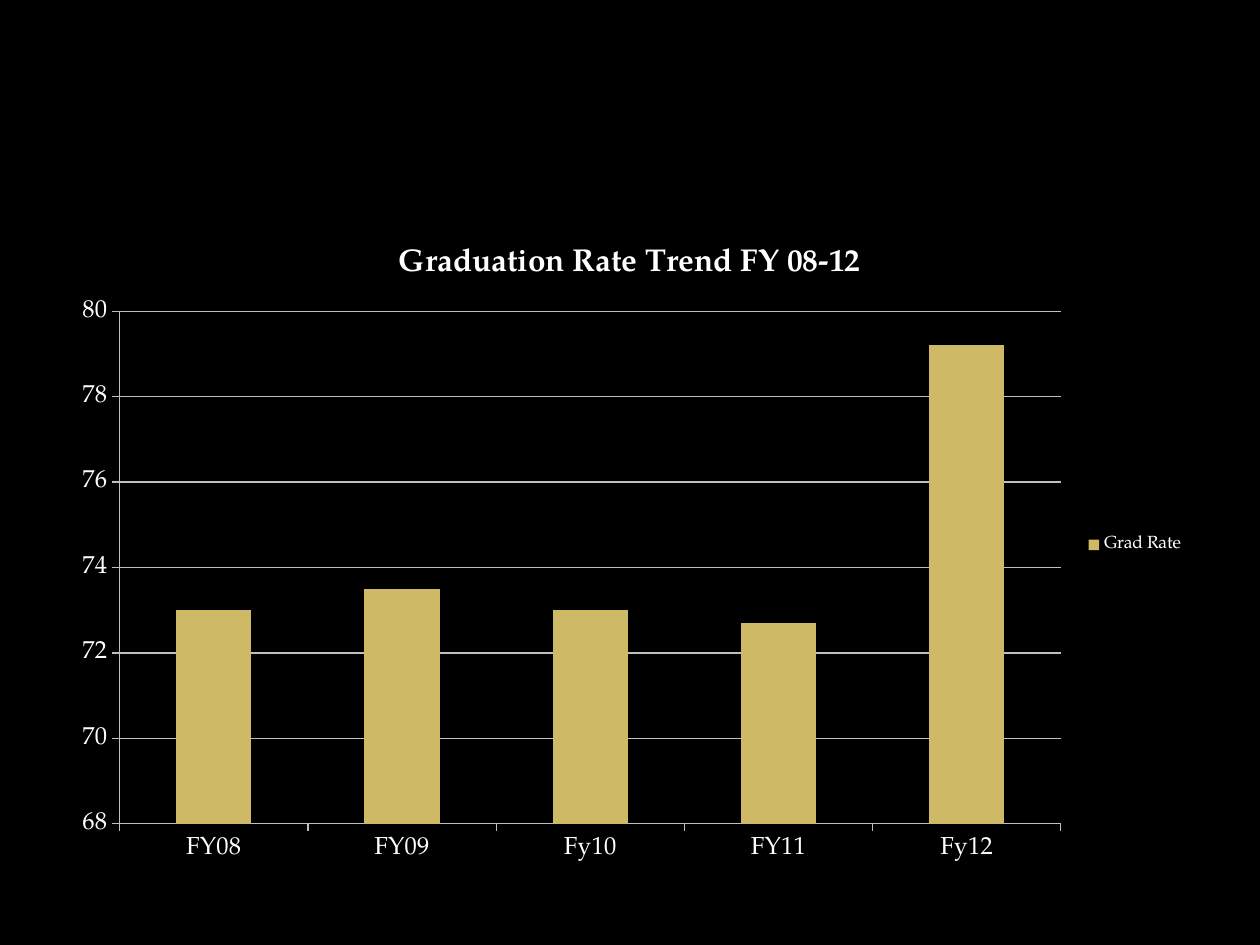
from dataclasses import dataclass

from lxml.etree import SubElement
from pptx import Presentation
from pptx.chart.chart import Chart
from pptx.chart.data import CategoryChartData
from pptx.dml.color import RGBColor
from pptx.enum.chart import XL_CHART_TYPE, XL_LEGEND_POSITION, XL_TICK_MARK
from pptx.oxml.ns import qn
from pptx.text.text import Font
from pptx.util import Pt

COLORS = {"background": "000000", "text": "FFFFFF", "bar": "CEB966", "line": "BFBFBF"}
FONT = "TeX Gyre Pagella"


@dataclass(frozen=True)
class YearRate:
    year: str
    rate: float


RATES = [
    YearRate("FY08", 73),
    YearRate("FY09", 73.5),
    YearRate("Fy10", 73),
    YearRate("FY11", 72.7),
    YearRate("Fy12", 79.2),
]


def rgb(name: str) -> RGBColor:
    return RGBColor.from_string(COLORS[name])


def set_font(font: Font, size: float, bold: bool = False) -> None:
    font.name = FONT
    font.size = Pt(size)
    font.bold = bold
    font.color.rgb = rgb("text")


def place_plot(chart: Chart, x: float, y: float, w: float, h: float) -> None:
    """Fix the inner plot area, in fractions of the chart frame."""
    plot_area = chart.plots[0]._element.getparent()
    layout = plot_area.find(qn("c:layout"))
    if layout is None:
        layout = SubElement(plot_area, qn("c:layout"))
        plot_area.insert(0, layout)
    manual = SubElement(layout, qn("c:manualLayout"))
    settings = {"layoutTarget": "inner", "xMode": "edge", "yMode": "edge",
                "x": x, "y": y, "w": w, "h": h}
    for tag, value in settings.items():
        SubElement(manual, qn(f"c:{tag}")).set("val", str(value))


def style_axes(chart: Chart) -> None:
    for axis in (chart.category_axis, chart.value_axis):
        set_font(axis.tick_labels.font, 14)
        axis.major_tick_mark = XL_TICK_MARK.OUTSIDE
        axis.minor_tick_mark = XL_TICK_MARK.NONE
        axis.format.line.color.rgb = rgb("line")
        axis.format.line.width = Pt(0.75)
    value_axis = chart.value_axis
    value_axis.minimum_scale, value_axis.maximum_scale = 68, 80
    value_axis.major_unit = 2
    value_axis.tick_labels.number_format = "General"
    value_axis.tick_labels.number_format_is_linked = False
    grid = value_axis.major_gridlines.format.line
    grid.color.rgb = rgb("line")
    grid.width = Pt(0.75)


def main() -> None:
    prs = Presentation()
    prs.slide_width, prs.slide_height = Pt(720), Pt(540)
    s = prs.slides.add_slide(prs.slide_layouts[6])
    s.background.fill.solid()
    s.background.fill.fore_color.rgb = rgb("background")

    data = CategoryChartData()
    data.categories = [item.year for item in RATES]
    data.add_series("Grad Rate", [item.rate for item in RATES])
    chart = s.shapes.add_chart(
        XL_CHART_TYPE.COLUMN_CLUSTERED, Pt(36), Pt(126), Pt(648), Pt(370.8), data
    ).chart
    set_font(chart.font, 10)

    chart.has_title = True
    tf = chart.chart_title.text_frame
    tf.text = "Graduation Rate Trend FY 08-12"
    set_font(tf.paragraphs[0].font, 18, bold=True)
    chart.chart_title.include_in_layout = False

    chart.has_legend = True
    chart.legend.position = XL_LEGEND_POSITION.RIGHT
    chart.legend.include_in_layout = False
    set_font(chart.legend.font, 10)

    plot = chart.plots[0]
    plot.gap_width = 150
    plot.vary_by_categories = False
    fill = plot.series[0].format.fill
    fill.solid()
    fill.fore_color.rgb = rgb("bar")

    style_axes(chart)
    place_plot(chart, 0.05, 0.14, 0.83, 0.79)
    prs.save("out.pptx")


if __name__ == "__main__":
    main()
